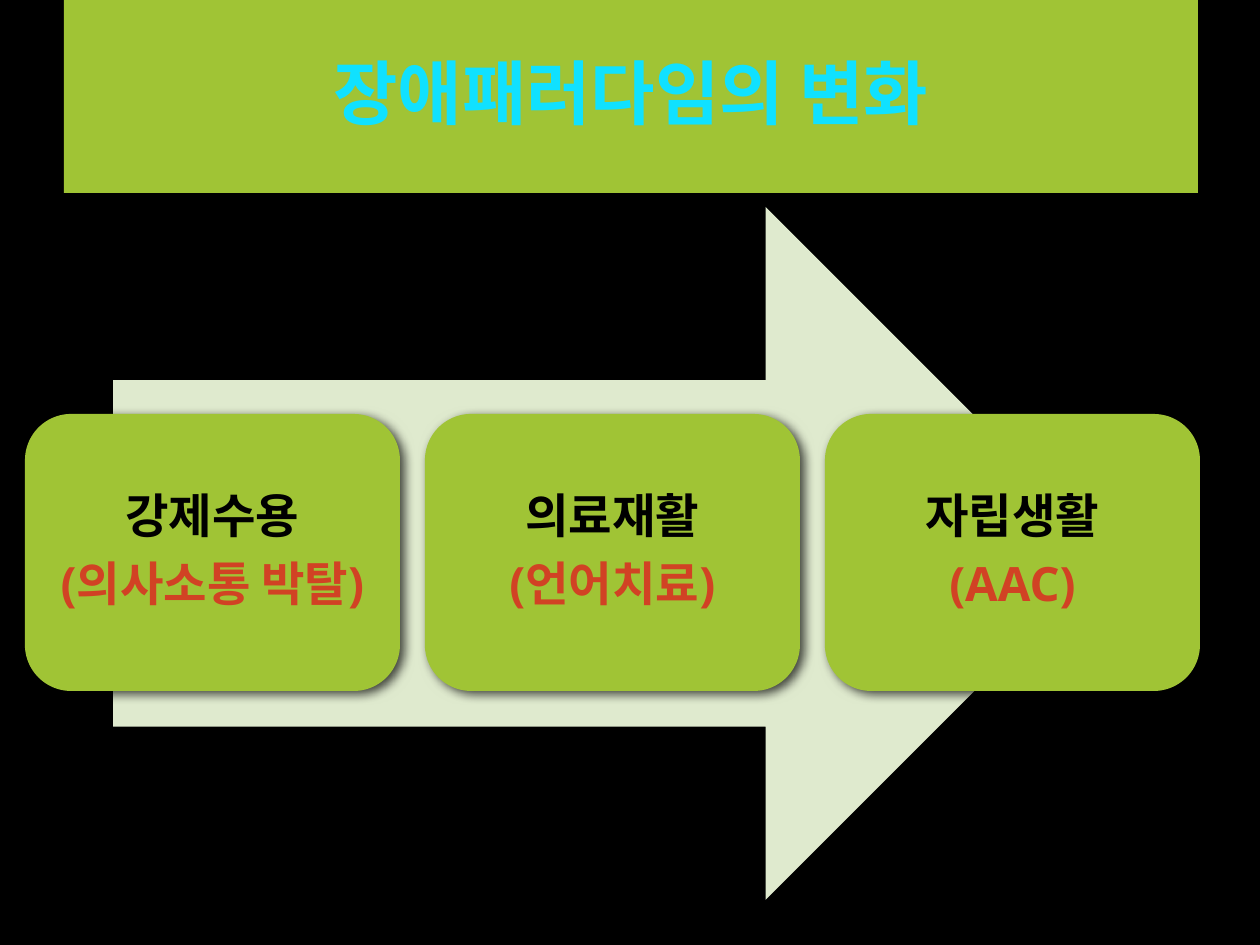
import pptx
import pptx.dml.color
import pptx.enum.shapes
import pptx.enum.text
import pptx.oxml
import pptx.oxml.ns
import pptx.util

EMU_PER_PX = 914400 / 126
COLORS = {
    "background": "000000",
    "green": "A0C435",
    "pale": "DFEACE",
    "title": "10E1FF",
    "stage": "000000",
    "detail": "D14224",
}
SHADOW = (
    f'<a:effectLst {pptx.oxml.ns.nsdecls("a")}>'
    '<a:outerShdw blurRad="76200" dist="38100" dir="2400000" rotWithShape="0">'
    '<a:srgbClr val="000000"><a:alpha val="71000"/></a:srgbClr>'
    '</a:outerShdw></a:effectLst>'
)
SPACE_AFTER = f'<a:spcAft {pptx.oxml.ns.nsdecls("a")}><a:spcPct val="35000"/></a:spcAft>'
shapes_enum = pptx.enum.shapes.MSO_SHAPE


def add_block(kind, left, top, width, height, color):
    bounds = [round(value * EMU_PER_PX) for value in (left, top, width, height)]
    block = slide.shapes.add_shape(kind, *bounds)
    block.fill.solid()
    block.fill.fore_color.rgb = pptx.dml.color.RGBColor.from_string(COLORS[color])
    block.line.fill.background()
    block.shadow.inherit = False
    return block


def write_lines(block, lines, size, inset):
    """Fill a block with centred bold lines, given as (text, color) pairs."""
    frame = block.text_frame
    frame.word_wrap = True
    frame.vertical_anchor = pptx.enum.text.MSO_ANCHOR.MIDDLE
    margin = round(inset * EMU_PER_PX)
    frame.margin_left = frame.margin_right = margin
    frame.margin_top = frame.margin_bottom = margin
    for index, (text, color) in enumerate(lines):
        para = frame.add_paragraph() if index else frame.paragraphs[0]
        para.text = text
        para.alignment = pptx.enum.text.PP_ALIGN.CENTER
        para.line_spacing = 0.9
        properties = para._p.get_or_add_pPr()
        properties.find(pptx.oxml.ns.qn("a:lnSpc")).addnext(pptx.oxml.parse_xml(SPACE_AFTER))
        para.font.name = "Noto Sans"
        para.font.size = pptx.util.Pt(size)
        para.font.bold = True
        para.font.color.rgb = pptx.dml.color.RGBColor.from_string(COLORS[color])


deck = pptx.Presentation()
deck.slide_width = round(1260 * EMU_PER_PX)
deck.slide_height = round(945 * EMU_PER_PX)
slide = deck.slides.add_slide(deck.slide_layouts[6])
slide.background.fill.solid()
slide.background.fill.fore_color.rgb = pptx.dml.color.RGBColor.from_string(COLORS["background"])

banner = add_block(shapes_enum.RECTANGLE, 64, 0, 1134, 193, "green")
write_lines(banner, [("장애패러다임의 변화", "title")], 40, 39)

add_block(shapes_enum.RIGHT_ARROW, 113, 207, 999, 693, "pale")

stages = [
    ("강제수용", "(의사소통 박탈)"),
    ("의료재활", "(언어치료)"),
    ("자립생활", "(AAC)"),
]
for column, (stage, detail) in enumerate(stages):
    box = add_block(shapes_enum.ROUNDED_RECTANGLE, 25 + 400 * column, 414, 375, 277, "green")
    properties = box._element.spPr
    properties.replace(properties.find(pptx.oxml.ns.qn("a:effectLst")), pptx.oxml.parse_xml(SHADOW))
    write_lines(box, [(stage, "stage"), (detail, "detail")], 27, 14)

deck.save("out.pptx")
